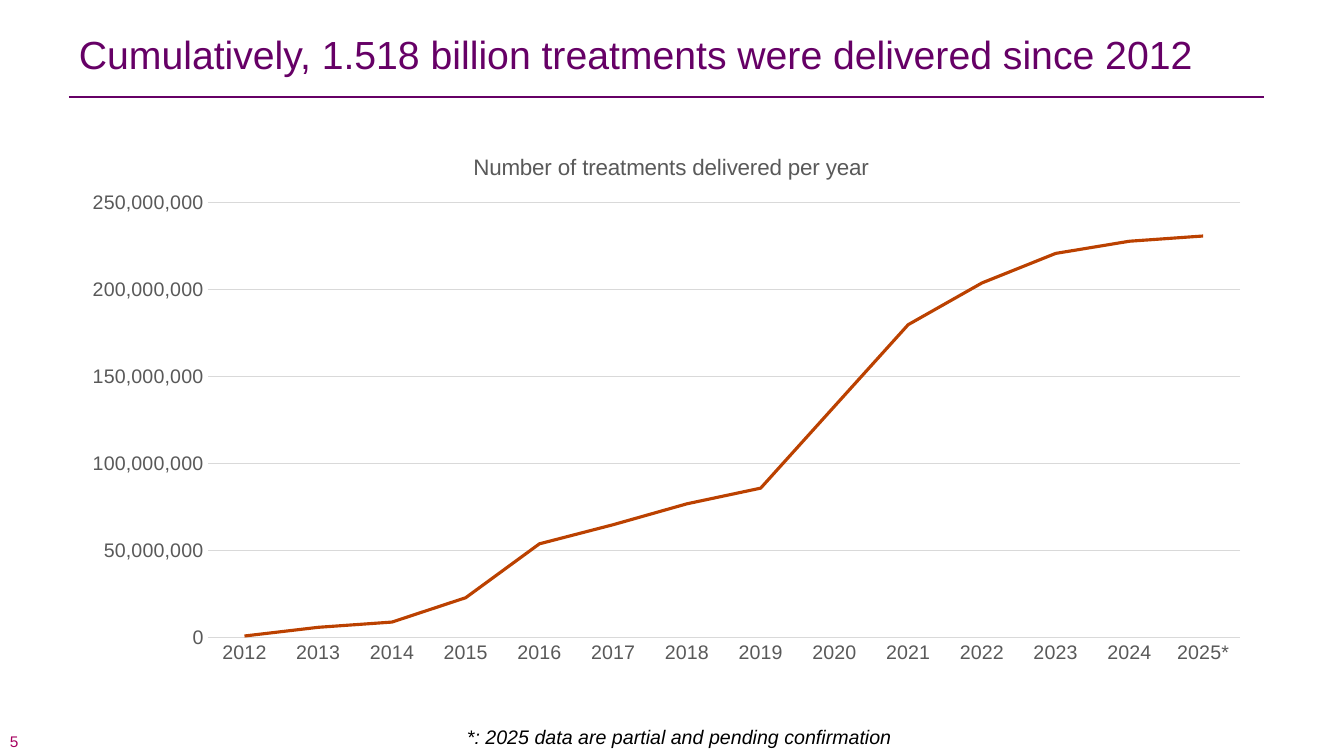
from lxml.etree import SubElement
from pptx import Presentation
from pptx.chart.data import CategoryChartData as ChartData
from pptx.dml.color import RGBColor as RGB
from pptx.enum.chart import XL_CHART_TYPE as ChartType, XL_TICK_MARK as Tick
from pptx.enum.text import MSO_ANCHOR as Anchor
from pptx.oxml import parse_xml
from pptx.oxml.ns import nsdecls, qn
from pptx.util import Pt

PX = 9072  # EMU in one px
FONT = "Arial"
PURPLE = RGB(0x66, 0x00, 0x66)
PINK = RGB(0xA7, 0x00, 0x5F)
BLACK = RGB(0x00, 0x00, 0x00)
GREY = RGB(0x59, 0x59, 0x59)
PALE = RGB(0xD9, 0xD9, 0xD9)
RUST = RGB(0xBB, 0x41, 0x00)

YEARS = [str(year) for year in range(2012, 2025)] + ["2025*"]
MILLIONS = [1, 6, 9, 23, 54, 65, 77, 86, 133, 180, 204, 221, 228, 231]


def px(*sizes):
    return [size * PX for size in sizes]


def style(font, size, color):
    font.name = FONT
    font.size = Pt(size)
    font.color.rgb = color
    font.bold = False


def add_text(slide, box, text, size, color):
    shape = slide.shapes.add_textbox(*px(*box))
    frame = shape.text_frame
    frame.word_wrap = True
    frame.text = text
    style(frame.paragraphs[0].runs[0].font, size, color)
    return frame


def add_head(slide, box):
    left, top, width, height = box
    # Title, a little wider than its rule
    frame = add_text(slide, (left, top, width + 23, height),
                     "Cumulatively, 1.518 billion treatments were delivered since 2012",
                     28, PURPLE)
    frame.paragraphs[0].line_spacing = Pt(26)
    # Rule
    y = top + 61
    rule = slide.shapes.add_connector(1, *px(left, y, left + width, y))
    rule.line.color.rgb = PURPLE
    rule.line.width = Pt(2)
    SubElement(rule._element.spPr, qn("a:effectLst"))


def layout(**parts):
    items = "".join(f'<c:{name} val="{val}"/>' for name, val in parts.items())
    return parse_xml(f'<c:layout {nsdecls("c")}><c:manualLayout>{items}'
                     '</c:manualLayout></c:layout>')


def place(node, new):
    old = node.find(qn("c:layout"))
    if old is not None:
        node.remove(old)
    text = node.find(qn("c:tx"))
    node.insert(0 if text is None else 1, new)


def add_graph(slide, box):
    width, height = box[2:]
    data = ChartData(number_format="#,##0")
    data.categories = YEARS
    data.add_series("Series 1", [n * 1_000_000 for n in MILLIONS])
    chart = slide.shapes.add_chart(ChartType.LINE, *px(*box), data).chart
    style(chart.font, 14, BLACK)
    chart.has_legend = False

    # Title and plot area
    chart.has_title = True
    title = chart.chart_title
    title.include_in_layout = False
    title.text_frame.text = "Number of treatments delivered per year"
    style(title.text_frame.paragraphs[0].runs[0].font, 16, GREY)
    place(title._element, layout(xMode="edge", yMode="edge",
                                 x=round(400 / width, 3), y=round(22 / height, 3)))
    place(chart._chartSpace.chart.plotArea,
          layout(layoutTarget="inner", xMode="edge", yMode="edge",
                 x=round(139 / width, 3), y=round(76 / height, 3),
                 w=round(1032 / width, 3), h=round(435 / height, 3)))

    # Axes
    years, counts = chart.category_axis, chart.value_axis
    for axis in (years, counts):
        style(axis.tick_labels.font, 14, GREY)
        axis.major_tick_mark = axis.minor_tick_mark = Tick.NONE
    counts.minimum_scale = 0
    counts.maximum_scale = 250_000_000
    counts.major_unit = 50_000_000
    counts.tick_labels.number_format = "#,##0"
    counts.tick_labels.number_format_is_linked = False
    counts.format.line.fill.background()
    for line in (years.format.line, counts.major_gridlines.format.line):
        line.color.rgb = PALE
        line.width = Pt(0.75)

    # Line
    chart.plots[0].vary_by_categories = False
    series = chart.plots[0].series[0]
    series.smooth = False
    series.format.line.color.rgb = RUST
    series.format.line.width = Pt(2.25)


def add_foot(slide, box):
    left, top, width, height = box
    # Note on the data
    note = add_text(slide, (left + 457, top, width - 457, height),
                    "*: 2025 data are partial and pending confirmation", 14, BLACK)
    note.paragraphs[0].runs[0].font.italic = True
    # Slide number
    number = add_text(slide, (left, top + 12, 107, 18), "5", 11, PINK)
    number.vertical_anchor = Anchor.MIDDLE
    number.margin_top = number.margin_bottom = 0


def main():
    deck = Presentation()
    deck.slide_width, deck.slide_height = px(1344, 756)
    slide = deck.slides.add_slide(deck.slide_layouts[6])
    add_head(slide, (69, 36, 1195, 76))
    add_graph(slide, (69, 127, 1195, 547))
    add_foot(slide, (0, 720, 1043, 34))
    deck.save("out.pptx")


if __name__ == "__main__":
    main()
